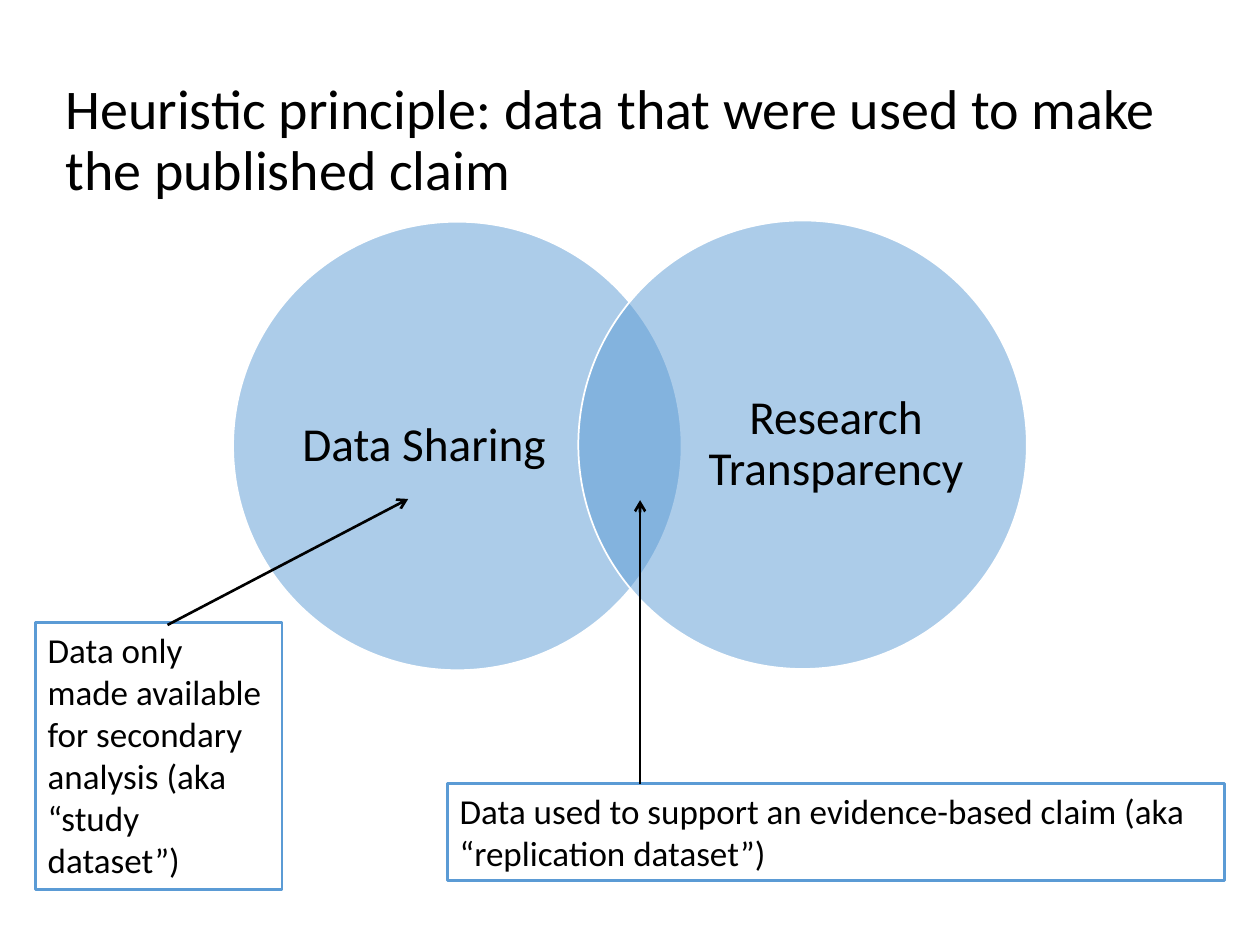
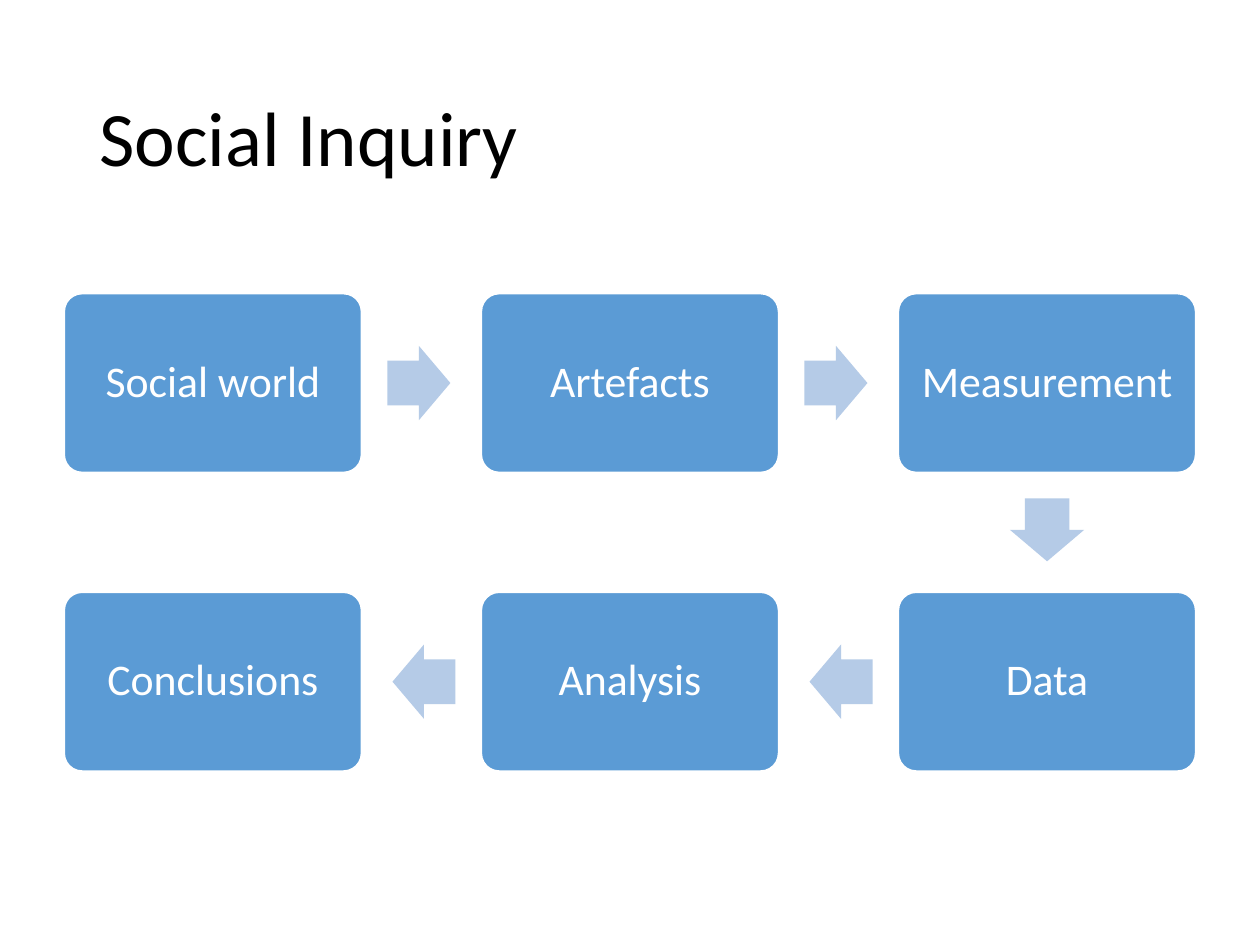
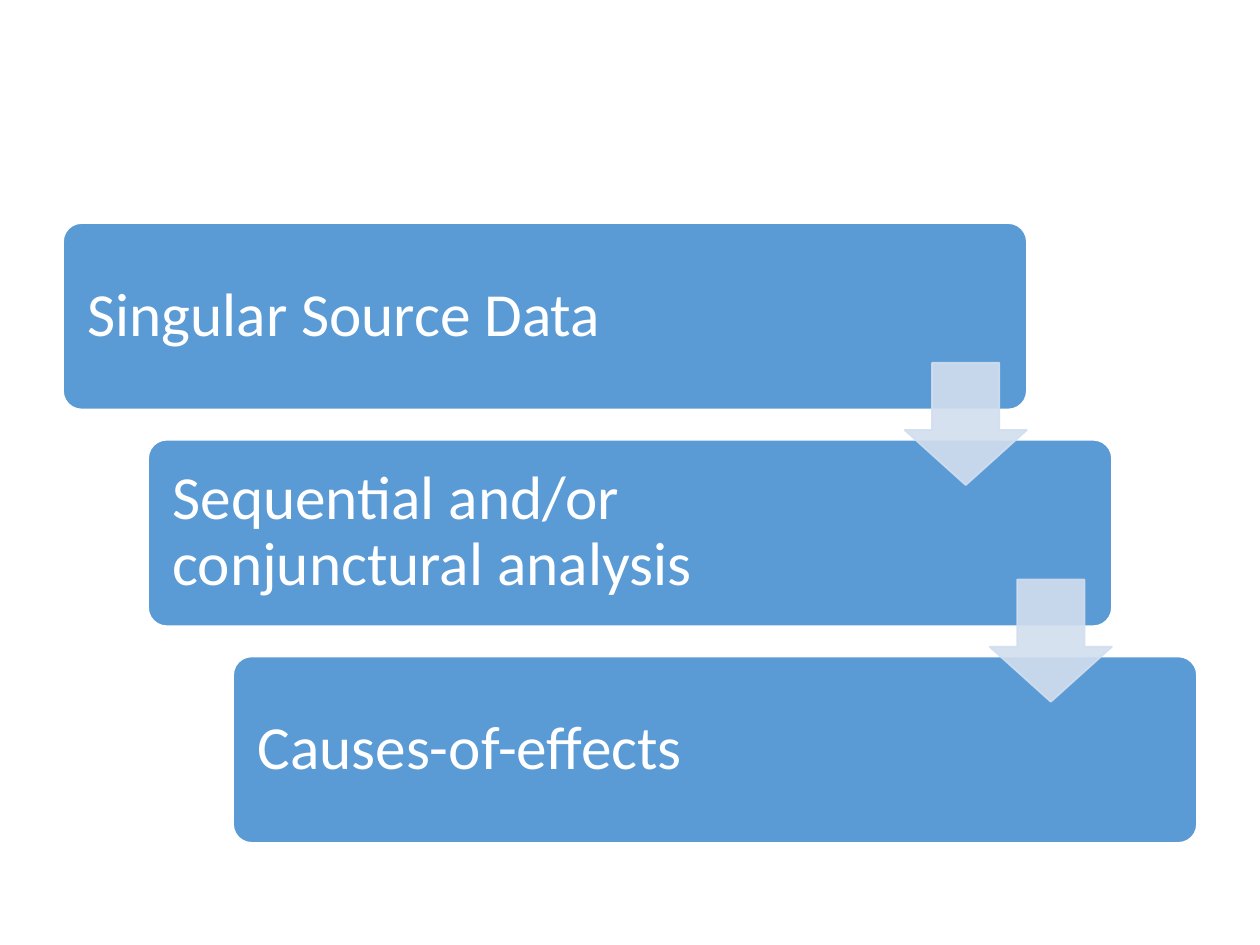
from lxml import etree
from pptx import Presentation
from pptx.dml.color import RGBColor
from pptx.enum import shapes, text
from pptx.oxml import ns
from pptx.util import Inches, Pt

COLOURS = {"ink": "000000", "paper": "FFFFFF", "blue": "5B9BD5",
           "step_arrow": "B5CBE7", "stair_arrow": "D2DEEF"}
FONT = "Calibri"
TITLE_ONLY, BLANK = 5, 6
KIND = shapes.MSO_SHAPE
LEFT, CENTRE = text.PP_ALIGN.LEFT, text.PP_ALIGN.CENTER
TOP, MIDDLE = text.MSO_ANCHOR.TOP, text.MSO_ANCHOR.MIDDLE


def colour(name):
    return RGBColor.from_string(COLOURS[name])


def write(frame, words, size, ink="ink", align=LEFT, anchor=MIDDLE,
          spacing=0.9, insets=(0.1, 0.05, 0.1, 0.05)):
    """Fill a text frame with one paragraph; insets run left, top, right, bottom."""
    frame.word_wrap = True
    frame.auto_size = text.MSO_AUTO_SIZE.NONE
    frame.vertical_anchor = anchor
    (frame.margin_left, frame.margin_top,
     frame.margin_right, frame.margin_bottom) = map(Inches, insets)
    para = frame.paragraphs[0]
    para.alignment, para.line_spacing = align, spacing
    span = para.add_run()
    span.text = words
    span.font.name, span.font.size = FONT, Pt(size)
    span.font.color.rgb = colour(ink)


def set_opacity(shape, percent):
    """Make the shape's fill and line partly transparent."""
    for node in shape._element.spPr.iter(ns.qn("a:srgbClr")):
        etree.SubElement(node, ns.qn("a:alpha"), val=str(percent * 1000))


class Slides:
    """Holds the deck's style and the page being drawn."""

    def __init__(self):
        self.deck = Presentation()
        self.deck.slide_width, self.deck.slide_height = Inches(10), Inches(7.5)
        self.page = None

    def new_page(self, layout):
        self.page = self.deck.slides.add_slide(self.deck.slide_layouts[layout])
        self.page.background.fill.solid()
        self.page.background.fill.fore_color.rgb = colour("paper")

    def title(self, words, left, width, size):
        box = self.page.shapes.title
        box.left, box.top, box.width, box.height = map(Inches, (left, 0.4, width, 1.45))
        write(box.text_frame, words, size)

    def shape(self, kind, place, fill=None, line=None, line_width=1, adjust=(),
              turn=0, opacity=100):
        box = self.page.shapes.add_shape(kind, *map(Inches, place))
        box.shadow.inherit = False
        box.rotation = turn
        for index, value in enumerate(adjust):
            box.adjustments[index] = value
        if fill:
            box.fill.solid()
            box.fill.fore_color.rgb = colour(fill)
        else:
            box.fill.background()
        if line:
            box.line.color.rgb = colour(line)
            box.line.width = Pt(line_width)
        else:
            box.line.fill.background()
        if opacity < 100:
            set_opacity(box, opacity)
        return box

    def card(self, words, place, size, align, insets):
        box = self.shape(KIND.ROUNDED_RECTANGLE, place, "blue", "paper", adjust=[0.1])
        write(box.text_frame, words, size, "paper", align, insets=insets)

    def circle(self, left, top):
        box = self.shape(KIND.OVAL, (left, top, 3.56, 3.56), "blue", "paper")
        # Only the fill is see-through; the outline stays solid
        fill = box._element.spPr.find(ns.qn("a:solidFill"))
        etree.SubElement(fill[0], ns.qn("a:alpha"), val="50000")

    def label(self, words, place):
        box = self.page.shapes.add_textbox(*map(Inches, place))
        write(box.text_frame, words, 27, align=CENTRE, insets=(0, 0, 0, 0))

    def note(self, words, place):
        box = self.shape(KIND.RECTANGLE, place, line="blue", line_width=1.5)
        write(box.text_frame, words, 20, anchor=TOP, spacing=1)

    def pointer(self, start, end):
        line = self.page.shapes.add_connector(
            shapes.MSO_CONNECTOR.STRAIGHT, *map(Inches, start + end))
        line.line.color.rgb = colour("ink")
        line.line.width = Pt(1.5)
        etree.SubElement(line.line._get_or_add_ln(), ns.qn("a:tailEnd"), type="arrow")
        etree.SubElement(line._element.spPr, ns.qn("a:effectLst"))


def draw_venn(slides):
    slides.new_page(TITLE_ONLY)
    slides.title("Heuristic principle: data that were used to make the published claim",
                 0.42, 9.06, 32)

    # Overlapping circles
    slides.circle(1.85, 1.76)
    slides.label("Data Sharing", (2.34, 2.18, 2.05, 2.72))
    slides.circle(4.59, 1.75)
    slides.label("Research Transparency", (5.61, 2.17, 2.05, 2.72))

    # Notes with their pointers
    slides.note("Data used to support an evidence-based claim (aka “replication dataset”)",
                (3.55, 6.22, 6.17, 0.77))
    slides.pointer((5.08, 6.22), (5.08, 3.97))
    slides.note("Data only made available for secondary analysis (aka “study dataset”)",
                (0.28, 4.94, 1.96, 2.12))
    slides.pointer((1.33, 4.96), (3.24, 3.96))


def draw_inquiry(slides):
    slides.new_page(TITLE_ONLY)
    slides.title("Social Inquiry", 0.69, 8.62, 44)

    steps = ["Social world", "Artefacts", "Measurement", "Data", "Analysis", "Conclusions"]
    columns, width, height = 3, 2.36, 1.42
    arrow_width, arrow_height, setback = 0.5, 0.59, 0.02

    # The path runs right along the first row and back along the second
    corners = []
    for index in range(len(steps)):
        row, column = divmod(index, columns)
        if row % 2:
            column = columns - 1 - column
        corners.append((0.51 + 3.31 * column, 2.33 + 2.37 * row))

    for words, corner in zip(steps, corners):
        slides.card(words, corner + (width, height), 25, CENTRE, (0.1,) * 4)

    # An arrow in each gap, a little nearer the step it leaves
    for (x, y), (next_x, next_y) in zip(corners, corners[1:]):
        across = (next_x > x) - (next_x < x)
        down = int(next_y > y)
        turn = 90 if down else 0 if across > 0 else 180
        middle_x = (x + next_x + width) / 2 - setback * across
        middle_y = (y + next_y + height) / 2 - setback * down
        slides.shape(KIND.RIGHT_ARROW,
                     (middle_x - arrow_width / 2, middle_y - arrow_height / 2,
                      arrow_width, arrow_height),
                     "step_arrow", adjust=(0.6, 0.5), turn=turn)


def draw_staircase(slides):
    slides.new_page(BLANK)
    stairs = ["Singular Source Data", "Sequential and/or conjunctural analysis",
              "Causes-of-effects"]
    shift, drop = 0.675, 1.72

    for index, words in enumerate(stairs):
        slides.card(words, (0.5 + shift * index, 1.77 + drop * index, 7.65, 1.48),
                    35, LEFT, (0.15, 0.15, 1.8, 0.15))
    for index in range(len(stairs) - 1):
        slides.shape(KIND.DOWN_ARROW,
                     (7.18 + shift * index, 2.88 + drop * index, 0.97, 0.97),
                     "stair_arrow", "stair_arrow", adjust=(0.55, 0.45), opacity=90)


def main():
    slides = Slides()
    draw_venn(slides)
    draw_inquiry(slides)
    draw_staircase(slides)
    slides.deck.save("out.pptx")


if __name__ == "__main__":
    main()
